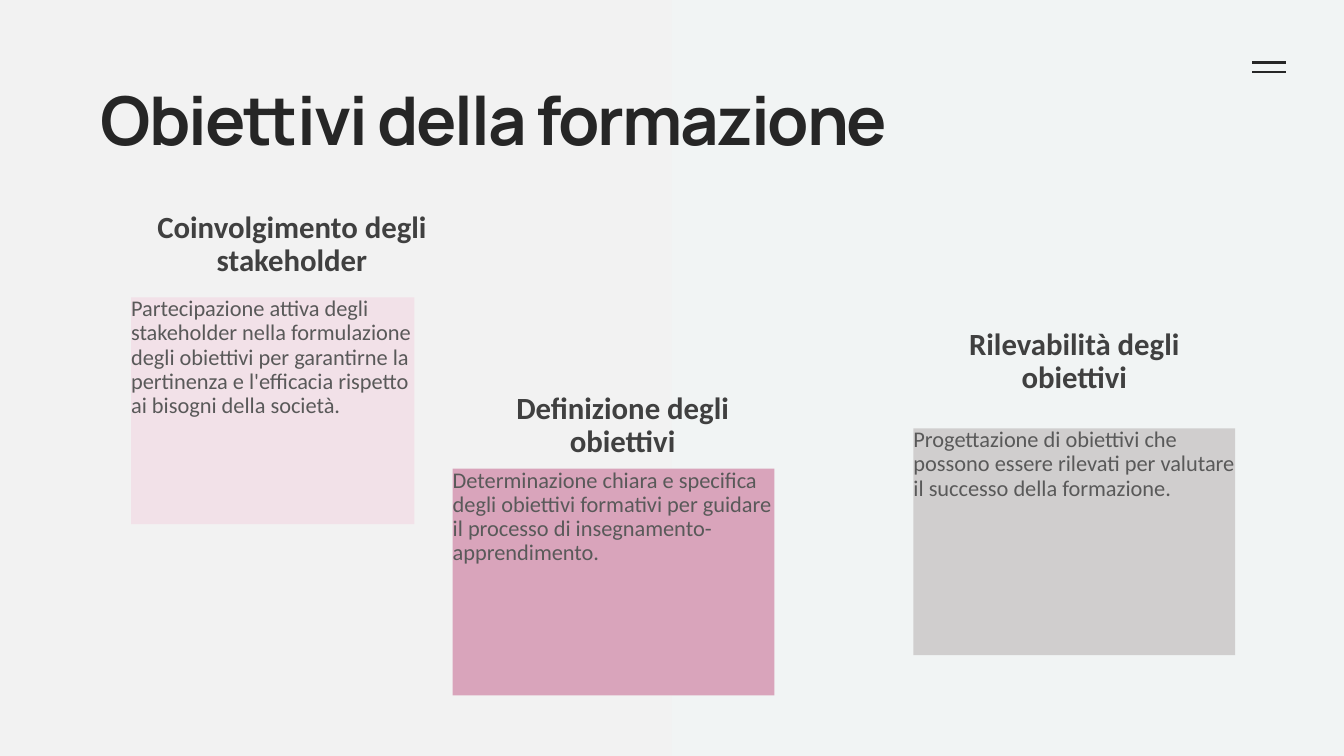
"""Build the slide "Obiettivi della formazione" with three training goals."""
from lxml import etree
from pptx import Presentation
from pptx.dml.color import RGBColor
from pptx.enum.shapes import MSO_CONNECTOR, MSO_SHAPE
from pptx.enum.text import MSO_ANCHOR, PP_ALIGN
from pptx.oxml.ns import qn
from pptx.util import Inches, Pt

RECTANGLE, STRAIGHT = MSO_SHAPE.RECTANGLE, MSO_CONNECTOR.STRAIGHT
TOP, BOTTOM = MSO_ANCHOR.TOP, MSO_ANCHOR.BOTTOM
LEFT, CENTER = PP_ALIGN.LEFT, PP_ALIGN.CENTER

TITLE = "Obiettivi della formazione"
GOALS = [
    {"heading": "Coinvolgimento degli stakeholder",
     "body": "Partecipazione attiva degli stakeholder nella formulazione degli obiettivi "
             "per garantirne la pertinenza e l'efficacia rispetto ai bisogni della società.",
     "heading_at": (1.3, 1.95), "card_at": (1.3, 2.95), "card_width": 2.81, "fill": "F2E1E8"},
    {"heading": "Definizione degli obiettivi",
     "body": "Determinazione chiara e specifica degli obiettivi formativi per guidare "
             "il processo di insegnamento-apprendimento.",
     "heading_at": (4.58, 3.75), "card_at": (4.49, 4.65), "card_width": 3.19, "fill": "D9A4BB"},
    {"heading": "Rilevabilità degli obiettivi",
     "body": "Progettazione di obiettivi che possono essere rilevati per valutare "
             "il successo della formazione.",
     "heading_at": (9.06, 3.11), "card_at": (9.06, 4.25), "card_width": 3.19, "fill": "D0CECE"},
]

THEME = {
    "background": "F2F2F2",
    "panel": "F1F4F4",
    "menu": "262626",
    "title": {"name": "Manrope", "size": Pt(48), "bold": True, "color": "262626"},
    "heading": {"name": "Calibri", "size": Pt(22), "bold": True, "color": "404040"},
    "body": {"name": "Calibri", "size": Pt(16), "bold": False, "color": "595959"},
}
PAGE_WIDTH, PAGE_HEIGHT = 13.33, 7.5
HEADING_SIZE = (3.19, 0.81)
CARD_HEIGHT = 2.25
MENU_LEFT, MENU_RIGHT, MENU_TOPS = 12.42, 12.75, (0.62, 0.71)


def add_rectangle(page, area, fill):
    box = page.shapes.add_shape(RECTANGLE, *map(Inches, area))
    box.shadow.inherit = False
    box.fill.solid()
    box.fill.fore_color.rgb = RGBColor.from_string(fill)
    box.line.fill.background()
    return box


def add_menu_line(page, top):
    ends = map(Inches, (MENU_LEFT, top, MENU_RIGHT, top))
    line = page.shapes.add_connector(STRAIGHT, *ends)
    line.line.color.rgb = RGBColor.from_string(THEME["menu"])
    line.line.width = Pt(1.5)
    etree.SubElement(line._element.spPr, qn("a:effectLst"))


def write(box, text, style, anchor=TOP, alignment=LEFT, space_before=10):
    frame = box.text_frame
    frame.word_wrap = True
    frame.vertical_anchor = anchor
    for side in ("left", "top", "right", "bottom"):
        setattr(frame, f"margin_{side}", 0)
    para = frame.paragraphs[0]
    para.alignment = alignment
    para.line_spacing = 0.9
    para.space_before = Pt(space_before)
    span = para.add_run()
    span.text = text
    for key, value in THEME[style].items():
        if key == "color":
            span.font.color.rgb = RGBColor.from_string(value)
        else:
            setattr(span.font, key, value)
    return span


def main():
    deck = Presentation()
    deck.slide_width, deck.slide_height = Inches(PAGE_WIDTH), Inches(PAGE_HEIGHT)
    page = deck.slides.add_slide(deck.slide_layouts[6])
    page.background.fill.solid()
    page.background.fill.fore_color.rgb = RGBColor.from_string(THEME["background"])

    half = PAGE_WIDTH / 2
    add_rectangle(page, (half, 0, half, PAGE_HEIGHT), THEME["panel"])
    for top in MENU_TOPS:
        add_menu_line(page, top)

    title_box = page.shapes.add_textbox(*map(Inches, (1, 0.87, 11.42, 1.45)))
    title_span = write(title_box, TITLE, "title", space_before=0)
    title_span.font._element.set("spc", "-150")

    for goal in GOALS:
        heading_area = goal["heading_at"] + HEADING_SIZE
        heading_box = page.shapes.add_textbox(*map(Inches, heading_area))
        write(heading_box, goal["heading"], "heading", BOTTOM, CENTER)
        card_area = goal["card_at"] + (goal["card_width"], CARD_HEIGHT)
        write(add_rectangle(page, card_area, goal["fill"]), goal["body"], "body")

    deck.save("out.pptx")


if __name__ == "__main__":
    main()
